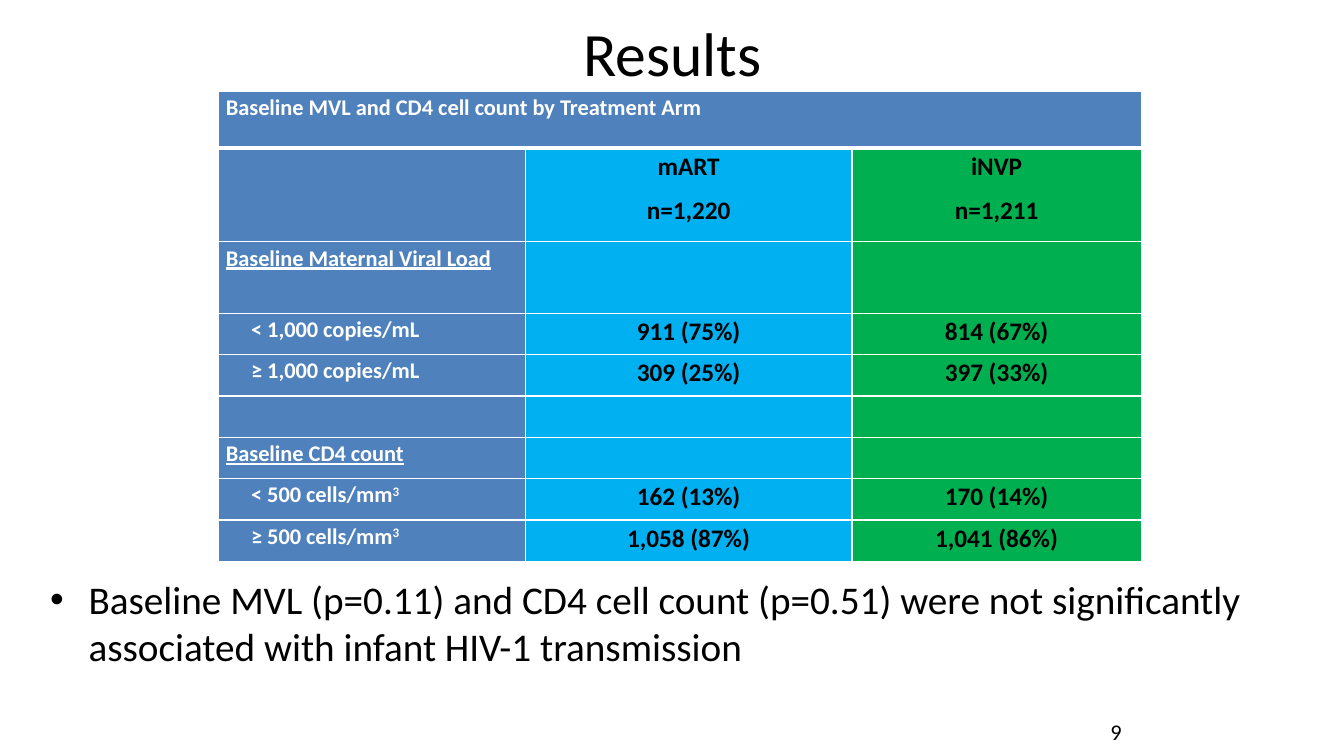
from lxml.etree import SubElement
from pptx import Presentation
from pptx.dml.color import RGBColor
from pptx.enum.text import MSO_ANCHOR, PP_ALIGN
from pptx.oxml.ns import qn
from pptx.util import Inches, Pt

WHITE, BLACK = "FFFFFF", "000000"
COLUMN_FILLS = ("4F81BD", "00B0F0", "00B050")
COLUMN_WIDTHS = (3.04, 3.24, 2.87)
ROW_HEIGHTS = (0.56, 0.93, 0.71) + (0.41,) * 6
HEADING_ROWS = (2, 6)
TABLE_ROWS = (
    ("Baseline MVL and CD4 cell count by Treatment Arm", "", ""),
    ("", "mART\nn=1,220", "iNVP\nn=1,211"),
    ("Baseline Maternal Viral Load", "", ""),
    ("< 1,000 copies/mL", "911 (75%)", "814 (67%)"),
    ("≥ 1,000 copies/mL", "309 (25%)", "397 (33%)"),
    ("", "", ""),
    ("Baseline CD4 count", "", ""),
    ("< 500 cells/mm^3", "162 (13%)", "170 (14%)"),
    ("≥ 500 cells/mm^3", "1,058 (87%)", "1,041 (86%)"),
)


def color(hex_value):
    return RGBColor.from_string(hex_value)


def set_attributes(target, values):
    for name, value in values.items():
        setattr(target, name, value)


def add_run(paragraph, text, size, hex_value=BLACK, **font_values):
    run = paragraph.add_run()
    run.text = text
    set_attributes(run.font, {"name": "Calibri", "size": Pt(size), **font_values})
    run.font.color.rgb = color(hex_value)
    return run


def set_indent(paragraph, left, first_line=0):
    properties = paragraph._p.get_or_add_pPr()
    properties.set("marL", str(Inches(left)))
    properties.set("indent", str(Inches(first_line)))
    return properties


def add_title(slide, text, box):
    title = slide.shapes.title
    set_attributes(title, dict(zip(("left", "top", "width", "height"), map(Inches, box))))
    title.text_frame.vertical_anchor = MSO_ANCHOR.MIDDLE
    paragraph = title.text_frame.paragraphs[0]
    paragraph.alignment = PP_ALIGN.CENTER
    add_run(paragraph, text, 44)


def add_text_box(slide, box):
    frame = slide.shapes.add_textbox(*map(Inches, box)).text_frame
    frame.word_wrap = True
    return frame


def add_bullet(slide, text, box):
    paragraph = add_text_box(slide, box).paragraphs[0]
    properties = set_indent(paragraph, 0.38, -0.38)
    SubElement(properties, qn("a:buFont"), typeface="Arial")
    SubElement(properties, qn("a:buChar"), char="•")
    add_run(paragraph, text, 28)


def add_slide_number(slide, text, box):
    frame = add_text_box(slide, box)
    frame.vertical_anchor = MSO_ANCHOR.MIDDLE
    frame.paragraphs[0].alignment = PP_ALIGN.CENTER
    add_run(frame.paragraphs[0], text, 16)


def set_borders(cell, bottom_width, top_width):
    properties = cell._tc.get_or_add_tcPr()
    for side, width in (("L", 1), ("R", 1), ("T", top_width), ("B", bottom_width)):
        line = SubElement(properties, qn(f"a:ln{side}"), w=str(Pt(width)))
        fill = SubElement(line, qn("a:solidFill"))
        SubElement(fill, qn("a:srgbClr"), val=WHITE)


def fill_cell(cell, text, row, column):
    """Write one cell; a caret in the text starts a superscript."""
    set_borders(cell, 3 if row == 0 else 1, 3 if row == 1 else 1)
    cell.fill.solid()
    cell.fill.fore_color.rgb = color(COLUMN_FILLS[column])
    set_attributes(cell, {
        "margin_left": Inches(0.07), "margin_right": Inches(0.07),
        "margin_top": Inches(0.01), "margin_bottom": 0,
    })
    is_label = column == 0
    size, text_color = (16, WHITE) if is_label else (18, BLACK)
    for index, line in enumerate(text.split("\n")):
        frame = cell.text_frame
        paragraph = frame.add_paragraph() if index else frame.paragraphs[0]
        set_attributes(paragraph, {
            "alignment": PP_ALIGN.LEFT if is_label else PP_ALIGN.CENTER,
            "line_spacing": 1.07, "space_after": Pt(8),
        })
        if not line:
            continue
        if is_label and row > 2 and row not in HEADING_ROWS:
            set_indent(paragraph, 0.25)
        base, _, superscript = line.partition("^")
        underline = is_label and row in HEADING_ROWS
        add_run(paragraph, base, size, text_color, bold=True, underline=underline)
        if superscript:
            run = add_run(paragraph, superscript, size, text_color, bold=True)
            run.font._element.set("baseline", "30000")


def add_results_table(slide, box):
    shape = slide.shapes.add_table(len(TABLE_ROWS), len(COLUMN_WIDTHS), *map(Inches, box))
    table = shape.table
    table.horz_banding = False
    for column, width in zip(table.columns, COLUMN_WIDTHS):
        column.width = Inches(width)
    for row, height in zip(table.rows, ROW_HEIGHTS):
        row.height = Inches(height)
    for row, texts in enumerate(TABLE_ROWS):
        for column, text in enumerate(texts):
            fill_cell(table.cell(row, column), text, row, column)
    table.cell(0, 0).merge(table.cell(0, 2))


def main():
    presentation = Presentation()
    presentation.slide_width = Inches(13.33)
    presentation.slide_height = Inches(7.5)
    slide = presentation.slides.add_slide(presentation.slide_layouts[5])
    add_title(slide, "Results", (2.17, -0.11, 9, 1.25))
    add_results_table(slide, (2.17, 0.91, 9.15, 4.64))
    add_bullet(
        slide,
        "Baseline MVL (p=0.11) and CD4 cell count (p=0.51) were not significantly "
        "associated with infant HIV-1 transmission",
        (0.4, 5.66, 12.53, 4.95),
    )
    add_slide_number(slide, "9", (10.57, 7.06, 1, 0.4))
    presentation.save("out.pptx")


if __name__ == "__main__":
    main()
